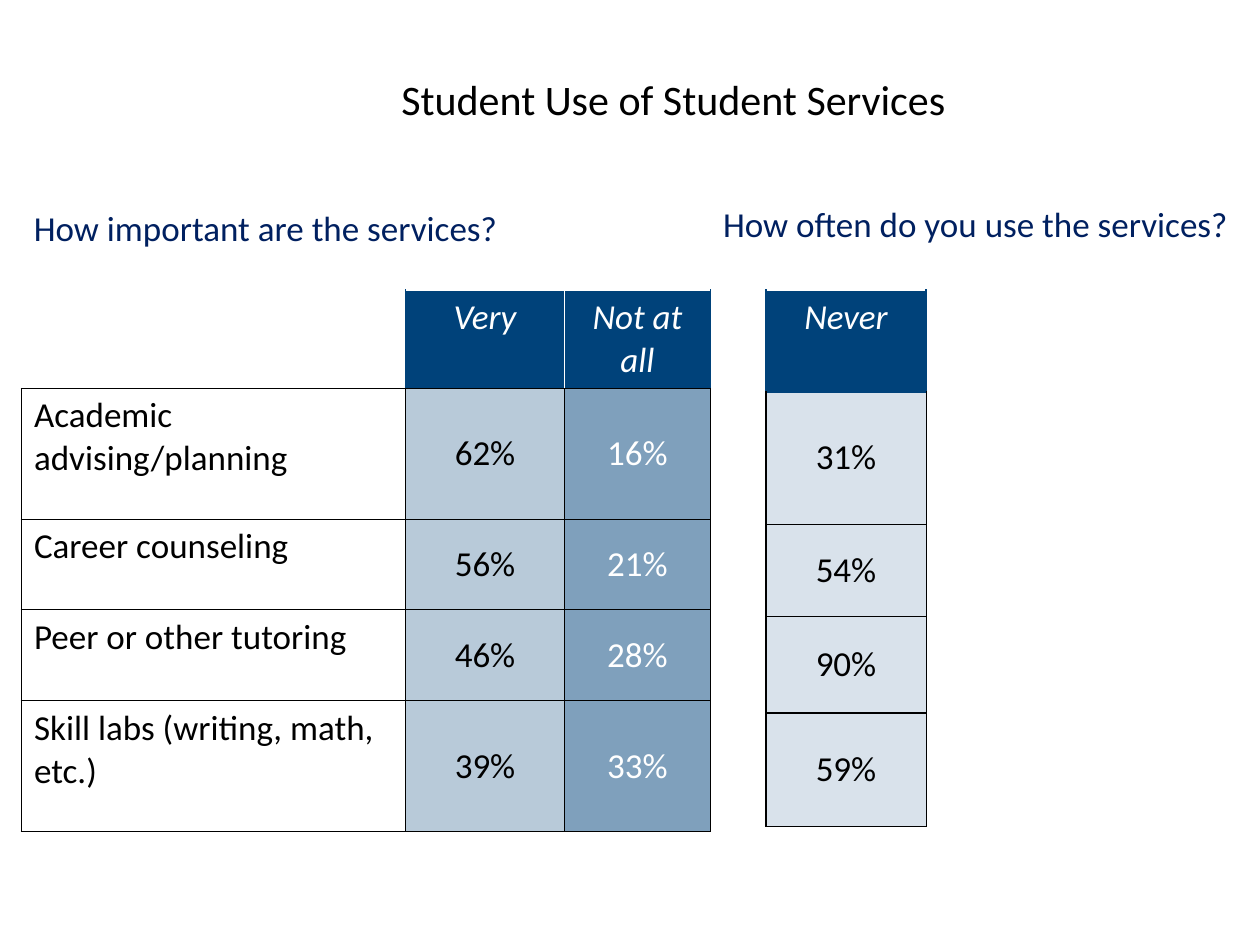
from lxml import etree
from pptx import Presentation
from pptx.dml.color import RGBColor
from pptx.enum.text import MSO_ANCHOR, MSO_AUTO_SIZE, PP_ALIGN
from pptx.oxml.ns import qn
from pptx.util import Inches, Pt

CENTER, LEFT = PP_ALIGN.CENTER, PP_ALIGN.LEFT
TOP, MIDDLE = MSO_ANCHOR.TOP, MSO_ANCHOR.MIDDLE
GROW = MSO_AUTO_SIZE.SHAPE_TO_FIT_TEXT
NAVY, HEADING, BLACK, WHITE = "00427A", "002060", "000000", "FFFFFF"
THIN, THICK = (BLACK, 0.5), (BLACK, 1)
WHITE_LINE, NAVY_LINE = (WHITE, 1), (NAVY, 1)


def rgb(color):
    return RGBColor.from_string(color)


def write(tf, text, color, size=20, align=LEFT, italic=False):
    p = tf.paragraphs[0]
    p.alignment = align
    r = p.add_run()
    r.text = text
    r.font.name = "Calibri"
    r.font.size = Pt(size)
    r.font.italic = italic
    r.font.color.rgb = rgb(color)
    return p


def fill_cell(cell, opacity):
    """Tint the cell navy at a percentage; 0 leaves it clear."""
    if not opacity:
        cell.fill.background()
        return
    cell.fill.solid()
    cell.fill.fore_color.rgb = rgb(NAVY)
    if opacity < 100:
        clr = cell._tc.tcPr.find(".//" + qn("a:srgbClr"))
        etree.SubElement(clr, qn("a:alpha"), val=str(opacity * 1000))


def set_borders(cell, left, right, top, bottom):
    tcPr = cell._tc.get_or_add_tcPr()
    sides = zip(("lnL", "lnR", "lnT", "lnB"), (left, right, top, bottom))
    for i, (tag, (color, width)) in enumerate(sides):
        ln = etree.Element(qn("a:" + tag), w=str(Pt(width)))
        fill = etree.SubElement(ln, qn("a:solidFill"))
        etree.SubElement(fill, qn("a:srgbClr"), val=color)
        tcPr.insert(i, ln)


def add_title(s, left, top, width, height, text):
    sp = s.shapes.title
    sp.left, sp.top = Inches(left), Inches(top)
    sp.width, sp.height = Inches(width), Inches(height)
    sp.text_frame.vertical_anchor = MIDDLE
    write(sp.text_frame, text, BLACK, 24, CENTER).line_spacing = 0.9


def add_question(s, left, top, width, text):
    sp = s.shapes.add_textbox(Inches(left), Inches(top), Inches(width), Inches(0.44))
    tf = sp.text_frame
    tf.word_wrap = True
    tf.auto_size = GROW
    write(tf, text, HEADING)


def add_survey_table(s, left, top, columns, heights, rows, header_edges, body_edges, row_edges):
    """Columns are (width, opacity, text colour, is label); edges are (colour, width)."""
    widths = [column[0] for column in columns]
    frame = s.shapes.add_table(len(rows), len(columns), Inches(left), Inches(top),
                               Inches(sum(widths)), Inches(sum(heights)))
    table = frame.table
    table.first_row = table.horz_banding = False
    for column, width in zip(table.columns, widths):
        column.width = Inches(width)
    for row, height in zip(table.rows, heights):
        row.height = Inches(height)

    for i, texts in enumerate(rows):
        header = i == 0
        edges = header_edges if header else body_edges
        for j, (text, (_, opacity, color, is_label)) in enumerate(zip(texts, columns)):
            cell = table.cell(i, j)
            cell.vertical_anchor = TOP if header or is_label else MIDDLE
            if text:
                write(cell.text_frame, text, WHITE if header else color,
                      align=LEFT if is_label else CENTER, italic=header)
            fill_cell(cell, 100 if header and text else opacity)
            set_borders(cell, edges[j], edges[j + 1], row_edges[i], row_edges[i + 1])


def main():
    prs = Presentation()
    prs.slide_width, prs.slide_height = Inches(10), Inches(7.5)
    s = prs.slides.add_slide(prs.slide_layouts[5])

    add_title(s, 1.74, 0.3, 7.21, 1.01, "Student Use of Student Services")
    add_survey_table(
        s, 0.17, 2.3,
        columns=[(3.05, 0, BLACK, True), (1.26, 28, BLACK, False), (1.16, 50, WHITE, False)],
        heights=[0.72, 1.04, 0.72, 0.72, 1.04],
        rows=[("", "Very", "Not at all"),
              ("Academic advising/planning", "62%", "16%"),
              ("Career counseling", "56%", "21%"),
              ("Peer or other tutoring", "46%", "28%"),
              ("Skill labs (writing, math, etc.)", "39%", "33%")],
        header_edges=[WHITE_LINE, NAVY_LINE, WHITE_LINE, NAVY_LINE],
        body_edges=[THICK, THICK, THIN, THICK],
        row_edges=[WHITE_LINE, THIN, THIN, THIN, THICK, THICK])
    add_survey_table(
        s, 6.08, 2.3,
        columns=[(1.27, 15, BLACK, False)],
        heights=[0.81, 1.05, 0.73, 0.77, 0.9],
        rows=[("Never",), ("31%",), ("54%",), ("90%",), ("59%",)],
        header_edges=[NAVY_LINE, NAVY_LINE],
        body_edges=[THICK, THIN],
        row_edges=[WHITE_LINE, NAVY_LINE, THIN, THIN, THICK, THICK])
    add_question(s, 0.17, 1.59, 4, "How important are the services?")
    add_question(s, 5.64, 1.56, 4.25, "How often do you use the services?")

    prs.save("out.pptx")


if __name__ == "__main__":
    main()
